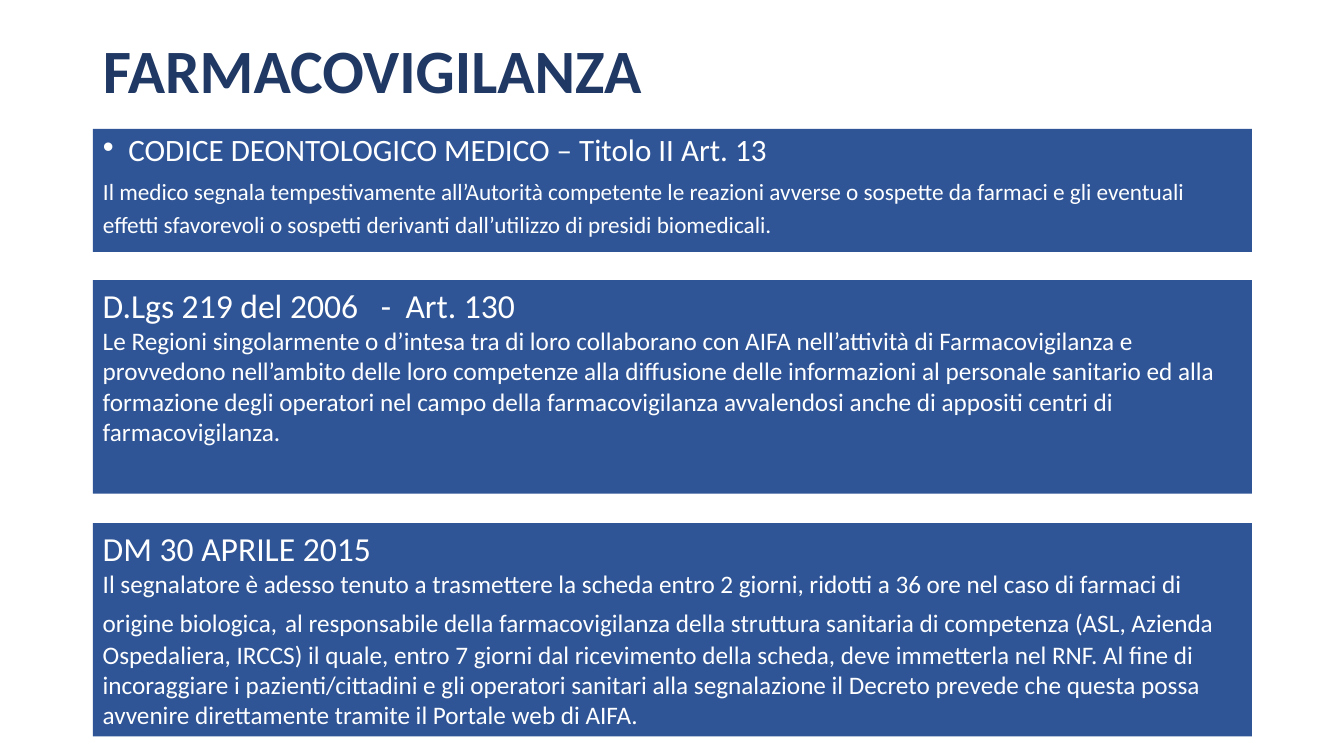
"""Builds the Farmacovigilanza slide with its three legal references."""
from lxml import etree
from pptx import Presentation
from pptx.dml.color import RGBColor
from pptx.enum.shapes import MSO_SHAPE
from pptx.enum.text import MSO_ANCHOR, MSO_AUTO_SIZE, PP_ALIGN
from pptx.oxml.ns import qn
from pptx.util import Cm, Pt

RECTANGLE = MSO_SHAPE.RECTANGLE
TOP, MIDDLE = MSO_ANCHOR.TOP, MSO_ANCHOR.MIDDLE
LEFT = PP_ALIGN.LEFT
NO_FIT = MSO_AUTO_SIZE.NONE

COLOURS = {"title": "203864", "panel": "2F5597", "text": "FFFFFF"}
FONT = "Calibri"
MARGIN, WIDTH = Cm(2.34), Cm(29.21)
HEADING_TABS = (Cm(7.01), Cm(7.63))

CODE_OF_CONDUCT = [
    [("CODICE DEONTOLOGICO MEDICO – Titolo II Art. 13", 22.2), (" ", 25.9)],
    [("Il medico segnala tempestivamente all’Autorità competente le reazioni "
      "avverse o sospette da farmaci e gli eventuali effetti sfavorevoli o "
      "sospetti derivanti dall’utilizzo di presidi biomedicali.", 16.6),
     (" ", 25.9)],
]
DECREE_2006 = [
    [("D.Lgs 219 del 2006\t-\tArt. 130", 24)],
    [("Le Regioni singolarmente o d’intesa tra di loro collaborano con AIFA "
      "nell’attività di Farmacovigilanza e", 18)],
    [("provvedono nell’ambito delle loro competenze alla diffusione delle "
      "informazioni al personale sanitario ed alla formazione degli operatori "
      "nel campo della farmacovigilanza avvalendosi anche di appositi centri "
      "di farmacovigilanza.", 18)],
]
DECREE_2015 = [
    [("DM 30 APRILE 2015", 24)],
    [("Il segnalatore è adesso tenuto a trasmettere la scheda entro 2 giorni, "
      "ridotti a 36 ore nel caso di farmaci di origine biologica,", 18),
     (" ", 24),
     ("al responsabile della farmacovigilanza della struttura sanitaria di "
      "competenza (ASL, Azienda Ospedaliera, IRCCS) il quale, entro 7 giorni "
      "dal ricevimento della scheda, deve immetterla nel RNF. Al fine di "
      "incoraggiare i pazienti/cittadini e gli operatori sanitari alla "
      "segnalazione il Decreto prevede che questa possa avvenire direttamente "
      "tramite il Portale web di AIFA.", 18)],
]


def place(shape, top, height):
    """Put a shape in the slide's single column."""
    shape.left, shape.top = MARGIN, top
    shape.width, shape.height = WIDTH, height


def paint(shape):
    """Give a panel its fill."""
    shape.fill.solid()
    shape.fill.fore_color.rgb = RGBColor.from_string(COLOURS["panel"])


def style(span, size, colour, bold=False):
    """Set the font of one run."""
    span.font.name = FONT
    span.font.size = Pt(size)
    span.font.bold = bold
    span.font.color.rgb = RGBColor.from_string(COLOURS[colour])


def set_bullet(para, symbol=None):
    """Give a paragraph a hanging bullet, or none."""
    properties = para._p.get_or_add_pPr()
    indent = Cm(0.64) if symbol else 0
    properties.set("marL", str(indent))
    properties.set("indent", str(-indent))
    if symbol:
        etree.SubElement(properties, qn("a:buChar")).set("char", symbol)
    else:
        etree.SubElement(properties, qn("a:buNone"))


def set_tabs(para, positions):
    """Add left tab stops to a paragraph."""
    tabs = etree.SubElement(para._p.get_or_add_pPr(), qn("a:tabLst"))
    for position in positions:
        tab = etree.SubElement(tabs, qn("a:tab"))
        tab.set("pos", str(position))
        tab.set("algn", "l")


def write(frame, paragraphs):
    """Fill a panel with paragraphs of sized spans and return them."""
    frame.word_wrap = True
    frame.auto_size = NO_FIT
    frame.vertical_anchor = TOP
    for index, spans in enumerate(paragraphs):
        para = frame.add_paragraph() if index else frame.paragraphs[0]
        para.alignment = LEFT
        for text, size in spans:
            span = para.add_run()
            span.text = text
            style(span, size, "text")
    return frame.paragraphs


def add_title(page, text):
    """Fill and format the title placeholder."""
    title = page.shapes.title
    place(title, Cm(0.51), Cm(2.67))
    frame = title.text_frame
    frame.text = text
    frame.auto_size = NO_FIT
    frame.vertical_anchor = MIDDLE
    para = frame.paragraphs[0]
    para.alignment = LEFT
    para.line_spacing = 0.9
    style(para.runs[0], 44, "title", bold=True)


def add_body(page, paragraphs):
    """Fill and format the body placeholder as a panel."""
    body = page.placeholders[1]
    place(body, Cm(3.25), Cm(3.1))
    paint(body)
    for index, para in enumerate(write(body.text_frame, paragraphs)):
        set_bullet(para, None if index else "•")
        para.line_spacing = 0.8
        para.space_before = Pt(10 if index else 0)


def add_panel(page, top, paragraphs):
    """Add a decree panel and return its paragraphs."""
    panel = page.shapes.add_shape(RECTANGLE, MARGIN, top, WIDTH, Cm(5.38))
    panel.shadow.inherit = False
    paint(panel)
    panel.line.fill.background()
    return write(panel.text_frame, paragraphs)


def main():
    """Build and save the deck."""
    deck = Presentation()
    deck.slide_width, deck.slide_height = Cm(33.87), Cm(19.05)
    page = deck.slides.add_slide(deck.slide_layouts[1])
    add_title(page, "FARMACOVIGILANZA")
    add_body(page, CODE_OF_CONDUCT)
    heading = add_panel(page, Cm(7.06), DECREE_2006)[0]
    set_tabs(heading, HEADING_TABS)
    add_panel(page, Cm(13.18), DECREE_2015)
    deck.save("out.pptx")


if __name__ == "__main__":
    main()
